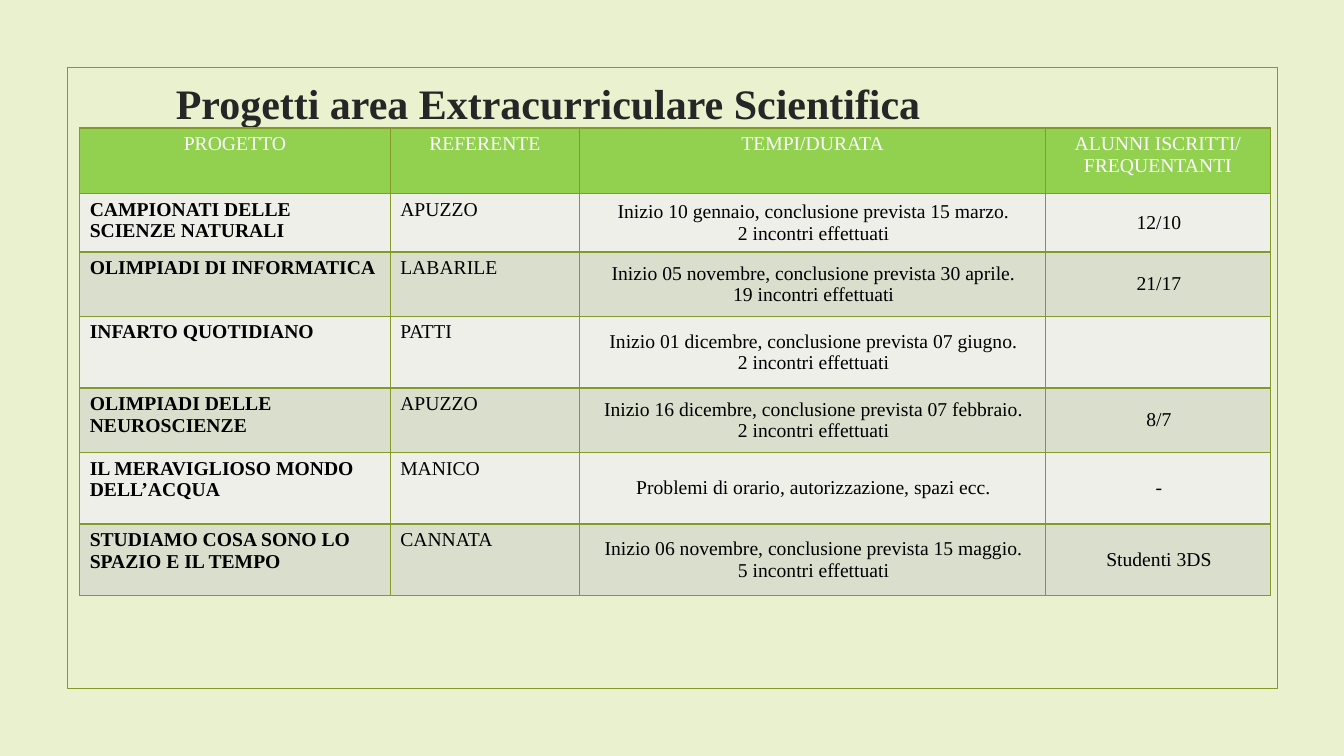
from lxml import etree
from pptx import Presentation
from pptx.dml.color import RGBColor
from pptx.enum.shapes import MSO_SHAPE
from pptx.enum.text import MSO_ANCHOR, PP_ALIGN
from pptx.oxml.ns import qn
from pptx.util import Inches, Pt

RECTANGLE = MSO_SHAPE.RECTANGLE
TOP, MIDDLE = MSO_ANCHOR.TOP, MSO_ANCHOR.MIDDLE
LEFT, CENTER = PP_ALIGN.LEFT, PP_ALIGN.CENTER

FONT = "Times New Roman"
BACKGROUND, OLIVE, GREEN = "EAF1CE", "83992A", "92D050"
BANDS = ["EDEFE8", "D9DECD"]
WHITE, BLACK, TITLE_GREY = "FFFFFF", "000000", "262626"

COLUMN_WIDTHS = [3.08, 1.88, 4.62, 2.23]
ROW_HEIGHTS = [0.65, 0.58, 0.64, 0.71, 0.64, 0.71, 0.71]
HEADERS = [["PROGETTO"], ["REFERENTE"], ["TEMPI/DURATA"], ["ALUNNI ISCRITTI/", "FREQUENTANTI"]]
PROJECTS = [
    ("CAMPIONATI DELLE SCIENZE NATURALI", "APUZZO",
     ["Inizio 10 gennaio, conclusione prevista 15 marzo.", "2 incontri effettuati"], "12/10"),
    ("OLIMPIADI DI INFORMATICA", "LABARILE",
     ["Inizio 05 novembre, conclusione prevista 30 aprile.", "19 incontri effettuati"], "21/17"),
    ("INFARTO QUOTIDIANO", "PATTI",
     ["Inizio 01 dicembre, conclusione prevista 07 giugno.", "2 incontri effettuati"], ""),
    ("OLIMPIADI DELLE NEUROSCIENZE", "APUZZO",
     ["Inizio 16 dicembre, conclusione prevista 07 febbraio.", "2 incontri effettuati"], "8/7"),
    ("IL MERAVIGLIOSO MONDO DELL’ACQUA", "MANICO",
     ["Problemi di orario, autorizzazione, spazi ecc."], "-"),
    ("STUDIAMO COSA SONO LO SPAZIO E IL TEMPO", "CANNATA",
     ["Inizio 06 novembre, conclusione prevista 15 maggio.", "5 incontri effettuati"], "Studenti 3DS"),
]


def color(value):
    """Turn a hex string into a colour."""
    return RGBColor.from_string(value)


def write(frame, lines, size, ink, align=LEFT, bold=False):
    """Write each non-empty line as its own paragraph."""
    for index, line in enumerate(lines):
        para = frame.add_paragraph() if index else frame.paragraphs[0]
        para.alignment = align
        if line:
            span = para.add_run()
            span.text = line
            span.font.name = FONT
            span.font.size = Pt(size)
            span.font.bold = bold
            span.font.color.rgb = color(ink)


def add_frame(page):
    """Draw the outlined frame around the content."""
    box = page.shapes.add_shape(RECTANGLE, Inches(0.67), Inches(0.67), Inches(12), Inches(6.16))
    box.shadow.inherit = False
    box.fill.background()
    box.line.color.rgb = color(OLIVE)
    box.line.width = Pt(1.25)


def add_title(page, text):
    """Place and format the title placeholder."""
    title = page.shapes.title
    title.left, title.top = Inches(0.74), Inches(0.67)
    title.width, title.height = Inches(9.4), Inches(0.69)
    title.text_frame.vertical_anchor = MIDDLE
    write(title.text_frame, [text], 30, TITLE_GREY, CENTER, True)


def add_borders(cell):
    """Give a cell a thin olive line on every side."""
    properties = cell._tc.get_or_add_tcPr()
    for side in ("a:lnL", "a:lnR", "a:lnT", "a:lnB"):
        line = etree.SubElement(properties, qn(side), w=str(Pt(1)))
        fill = etree.SubElement(line, qn("a:solidFill"))
        etree.SubElement(fill, qn("a:srgbClr"), val=OLIVE)


def fill_cell(cell, lines, fill, ink=BLACK, align=LEFT, bold=False):
    """Set the borders, fill and text of a cell."""
    add_borders(cell)
    cell.fill.solid()
    cell.fill.fore_color.rgb = color(fill)
    cell.vertical_anchor = TOP
    write(cell.text_frame, lines, 14, ink, align, bold)


def fill_centered(cell, lines, fill):
    """Fill a cell whose text sits in the middle with narrow margins."""
    fill_cell(cell, lines, fill, align=CENTER)
    cell.vertical_anchor = MIDDLE
    cell.margin_left, cell.margin_right = Inches(0.04), Inches(0.02)


def add_projects(page):
    """Build the table of projects."""
    table = page.shapes.add_table(
        len(ROW_HEIGHTS), len(COLUMN_WIDTHS), Inches(0.79), Inches(1.27),
        Inches(sum(COLUMN_WIDTHS)), Inches(sum(ROW_HEIGHTS))).table
    table.first_row = table.horz_banding = False
    for column, width in zip(table.columns, COLUMN_WIDTHS):
        column.width = Inches(width)
    for row, height in zip(table.rows, ROW_HEIGHTS):
        row.height = Inches(height)
    for column, lines in enumerate(HEADERS):
        fill_cell(table.cell(0, column), lines, GREEN, WHITE, CENTER)
    for row, (project, teacher, schedule, students) in enumerate(PROJECTS, 1):
        band = BANDS[(row - 1) % 2]
        fill_cell(table.cell(row, 0), [project], band, bold=True)
        fill_cell(table.cell(row, 1), [teacher], band)
        fill_centered(table.cell(row, 2), schedule, band)
        fill_centered(table.cell(row, 3), [students], band)


def main():
    """Build the slide and save it."""
    deck = Presentation()
    deck.slide_width, deck.slide_height = Inches(13.33), Inches(7.5)
    page = deck.slides.add_slide(deck.slide_layouts[5])
    page.background.fill.solid()
    page.background.fill.fore_color.rgb = color(BACKGROUND)
    add_frame(page)
    add_title(page, "Progetti area Extracurriculare Scientifica")
    add_projects(page)
    deck.save("out.pptx")


if __name__ == "__main__":
    main()
